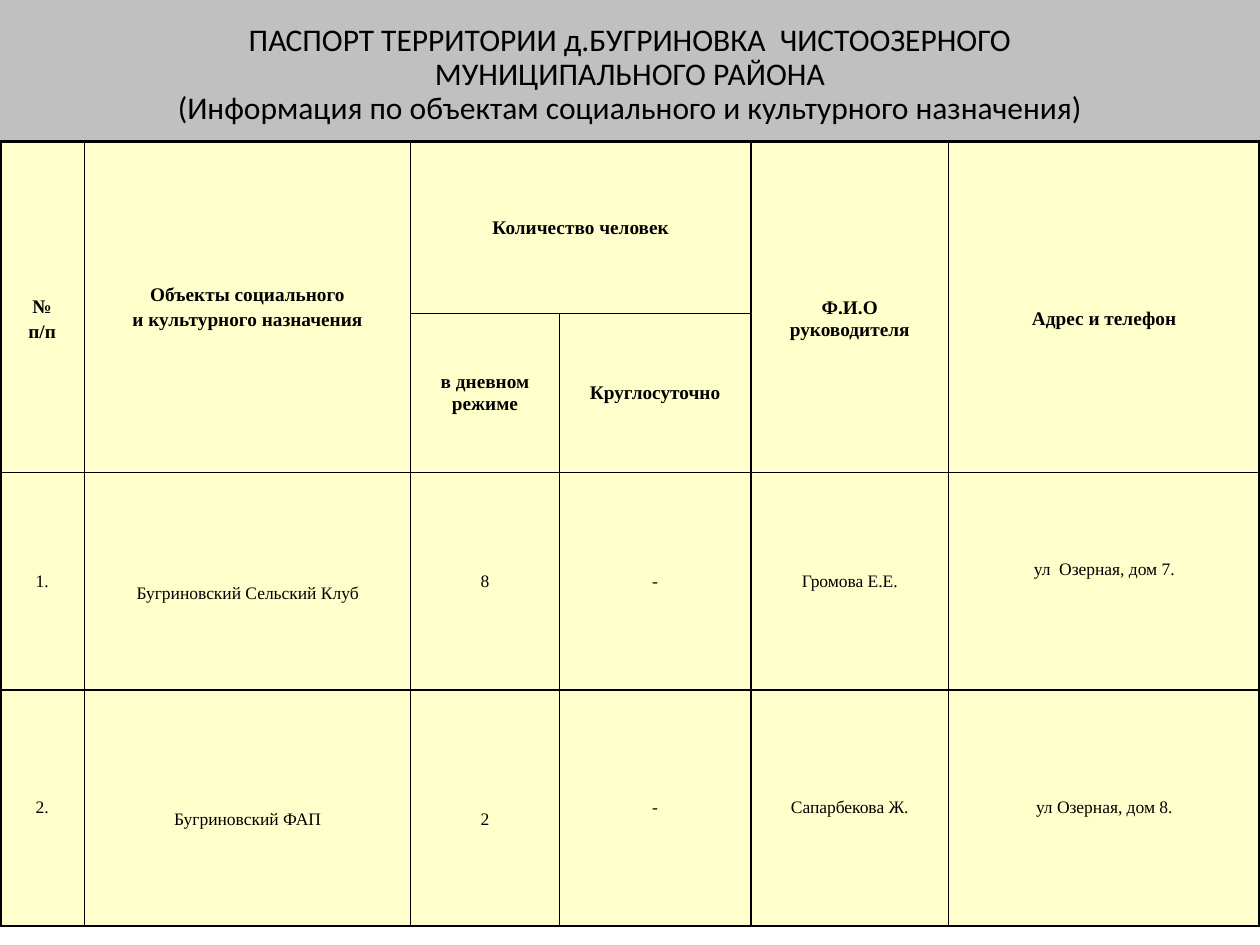
from dataclasses import dataclass

from lxml import etree
from pptx import Presentation
from pptx import util as u
from pptx.dml.color import RGBColor
from pptx.enum import text
from pptx.oxml.ns import qn


@dataclass(frozen=True)
class Theme:
    ink: str = "000000"
    band: str = "C0C0C0"
    paper: str = "FFFFCC"
    heading_font: str = "Calibri"
    table_font: str = "Times New Roman"
    heading_size: float = 18
    header_size: float = 11
    body_size: float = 10
    outer_line: float = 2.25
    inner_line: float = 1
    nudge: float = 0.19


THEME = Theme()
COLUMN_SHARES = [0.67, 2.59, 1.18, 1.52, 1.57, 2.47]
ROW_SHARES = [1.36, 1.26, 1.72, 1.87]
HEADING = [
    "ПАСПОРТ ТЕРРИТОРИИ д.БУГРИНОВКА  ЧИСТООЗЕРНОГО",
    "МУНИЦИПАЛЬНОГО РАЙОНА",
    "(Информация по объектам социального и культурного назначения)",
]
HEADER_ROWS = 2
ENTRIES = [
    ["№\nп/п", "Объекты социального\nи культурного назначения",
     "Количество человек", None, "Ф.И.О руководителя", "Адрес и телефон"],
    [None, None, "в дневном режиме", "Круглосуточно", None, None],
    ["1.", "Бугриновский Сельский Клуб", "8", "-", "Громова Е.Е.",
     "ул  Озерная, дом 7."],
    ["2.", "Бугриновский ФАП", "2", "-", "Сапарбекова Ж.",
     "ул Озерная, дом 8."],
]
MERGES = [((0, c), (1, c)) for c in (0, 1, 4, 5)] + [((0, 2), (0, 3))]
LOWERED = {(0, 0), (0, 4), (0, 5), (2, 1), (3, 1), (3, 2)}
RAISED = {(2, 5)}


def write(frame, lines, font, size, bold=False, line_spacing=None, gap=0):
    frame.text = "\n".join(lines)
    for position, paragraph in enumerate(frame.paragraphs):
        paragraph.alignment = text.PP_ALIGN.CENTER
        paragraph.line_spacing = line_spacing
        paragraph.space_before = u.Pt(gap if position else 0)
        paragraph.font.name = font
        paragraph.font.size = u.Pt(size)
        paragraph.font.bold = bold
        paragraph.font.color.rgb = RGBColor.from_string(THEME.ink)


def draw_borders(cell, row, column):
    outer_edges = {
        "lnL": column == 0,
        "lnR": column == len(COLUMN_SHARES) - 1,
        "lnT": row == 0,
        "lnB": False,
    }
    properties = cell._tc.get_or_add_tcPr()
    for edge, is_outer in outer_edges.items():
        width = THEME.outer_line if is_outer else THEME.inner_line
        line = etree.SubElement(properties, qn(f"a:{edge}"), w=str(u.Pt(width)))
        fill = etree.SubElement(line, qn("a:solidFill"))
        etree.SubElement(fill, qn("a:srgbClr"), val=THEME.ink)


def add_heading(slide, left, top, width, height):
    heading = slide.shapes.title
    heading.left, heading.top, heading.width, heading.height = left, top, width, height
    heading.fill.solid()
    heading.fill.fore_color.rgb = RGBColor.from_string(THEME.band)
    frame = heading.text_frame
    write(frame, HEADING, THEME.heading_font, THEME.heading_size, line_spacing=0.9)
    frame.word_wrap = True
    frame.auto_size = text.MSO_AUTO_SIZE.NONE
    frame.vertical_anchor = text.MSO_ANCHOR.MIDDLE
    frame.margin_left = frame.margin_right = u.Inches(0.04)
    frame.margin_top, frame.margin_bottom = u.Inches(0.09), u.Inches(0.02)


def add_facilities(slide, left, top, width, height):
    facilities = slide.shapes.add_table(
        len(ROW_SHARES), len(COLUMN_SHARES), left, top, width, height).table
    facilities.first_row = facilities.horz_banding = False
    for column, share in zip(facilities.columns, COLUMN_SHARES):
        column.width = int(width * share / sum(COLUMN_SHARES))
    for row, share in zip(facilities.rows, ROW_SHARES):
        row.height = int(height * share / sum(ROW_SHARES))
    for first, last in MERGES:
        facilities.cell(*first).merge(facilities.cell(*last))

    for r, entries in enumerate(ENTRIES):
        is_header = r < HEADER_ROWS
        size = THEME.header_size if is_header else THEME.body_size
        for c, entry in enumerate(entries):
            cell = facilities.cell(r, c)
            draw_borders(cell, r, c)
            cell.fill.solid()
            cell.fill.fore_color.rgb = RGBColor.from_string(THEME.paper)
            if entry is None:
                continue
            cell.vertical_anchor = text.MSO_ANCHOR.MIDDLE
            cell.margin_top = u.Inches(0.05 + THEME.nudge * ((r, c) in LOWERED))
            cell.margin_bottom = u.Inches(0.05 + THEME.nudge * ((r, c) in RAISED))
            write(cell.text_frame, entry.split("\n"), THEME.table_font, size,
                  bold=is_header, gap=0.2 * size)


def main():
    deck = Presentation()
    deck.slide_width, deck.slide_height = u.Inches(10), u.Inches(7.5)
    slide = deck.slides.add_slide(deck.slide_layouts.get_by_name("Title Only"))
    width, height = deck.slide_width, deck.slide_height
    heading_height = int(height * 0.15)
    add_heading(slide, 0, 0, width, heading_height)
    add_facilities(slide, 0, heading_height, width, int(height * 0.83))
    deck.save("out.pptx")


if __name__ == "__main__":
    main()
